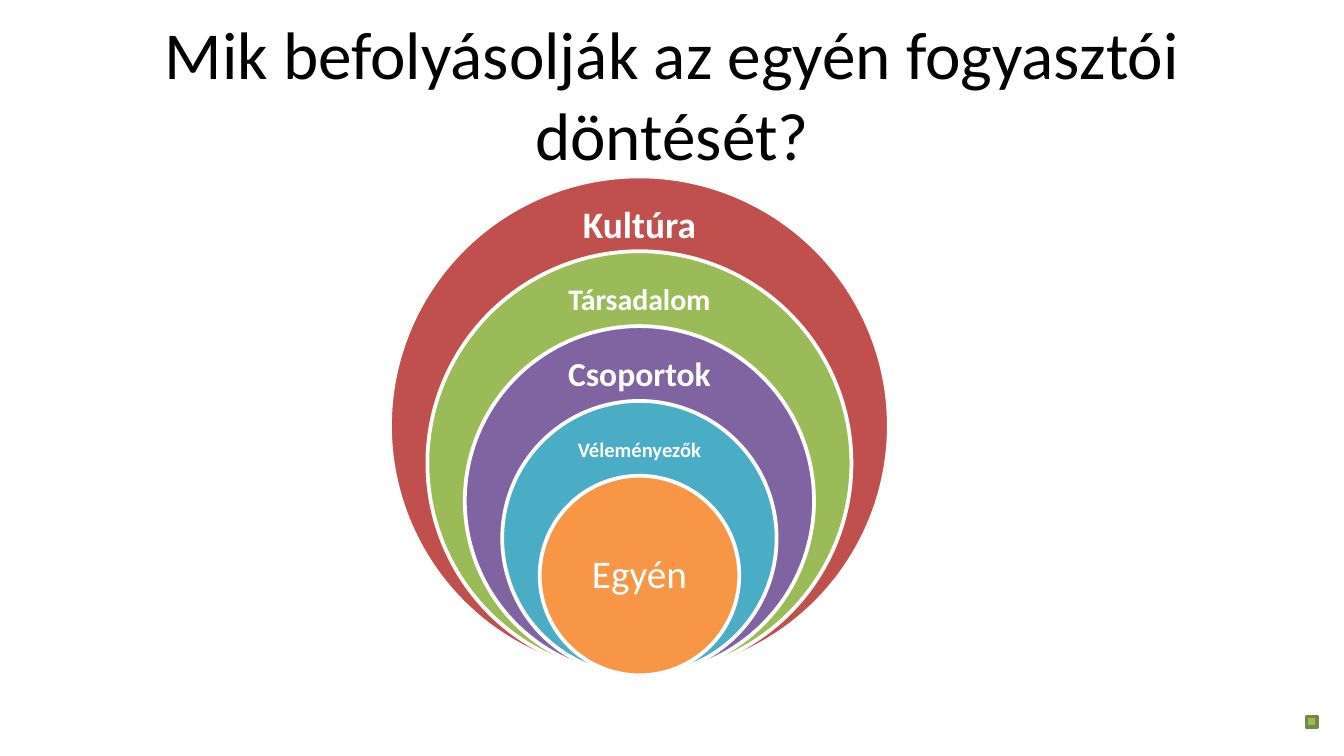
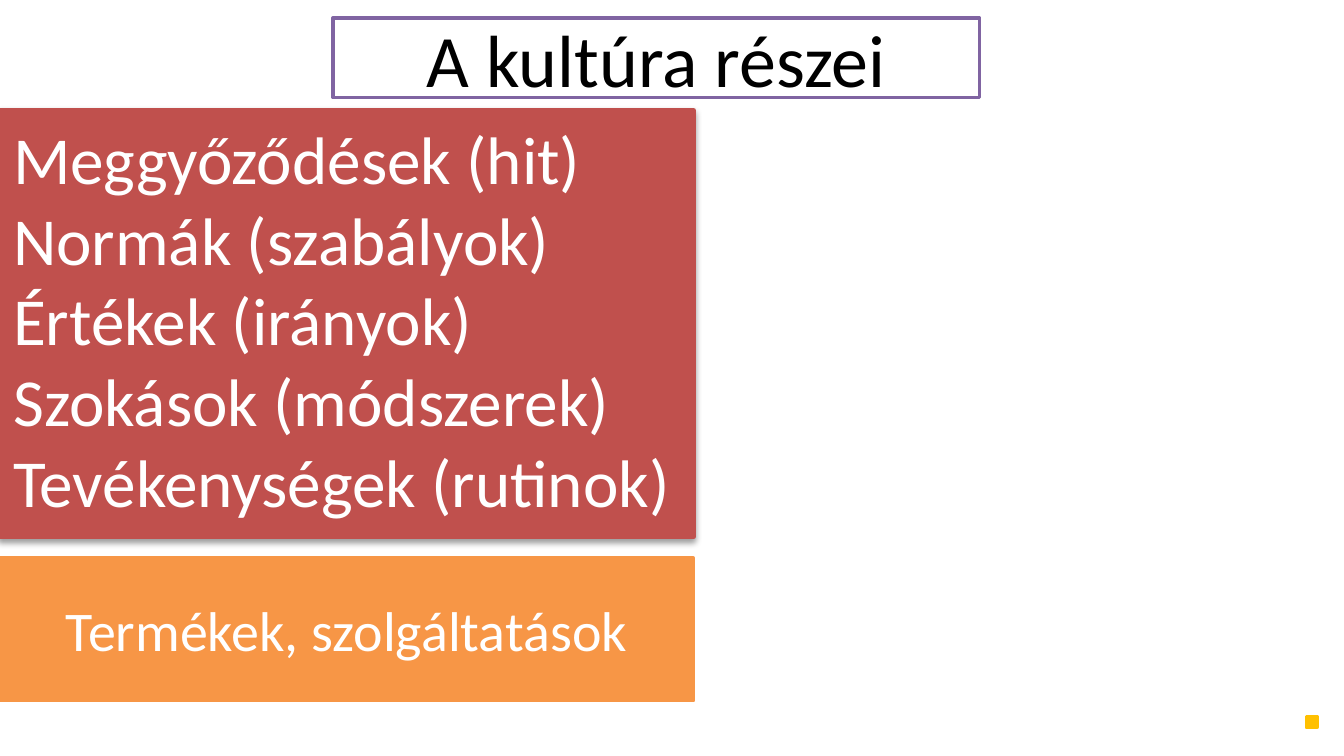
import pptx
import pptx.util
import pptx.dml.color
import pptx.enum.shapes
import pptx.enum.text
import pptx.oxml
import pptx.oxml.ns

COLS, ROWS = 100, 56.25
CELL = pptx.util.Inches(0.1)
FONT = "Calibri"
WHITE, BLACK = "FFFFFF", "000000"
RED, GREEN, PURPLE = "C0504D", "9BBB59", "8064A2"
TEAL, ORANGE, GOLD, OLIVE = "4BACC6", "F79646", "FFC000", "738A42"
RECT = pptx.enum.shapes.MSO_SHAPE.RECTANGLE
OVAL = pptx.enum.shapes.MSO_SHAPE.OVAL
LEFT = pptx.enum.text.PP_ALIGN.LEFT
CENTER = pptx.enum.text.PP_ALIGN.CENTER
TOP = pptx.enum.text.MSO_ANCHOR.TOP
MIDDLE = pptx.enum.text.MSO_ANCHOR.MIDDLE

RINGS = [
    ("Kultúra", RED, 20),
    ("Társadalom", GREEN, 16),
    ("Csoportok", PURPLE, 18),
    ("Véleményezők", TEAL, 11),
    ("Egyén", ORANGE, 21),
]
PARTS = [
    "Meggyőződések (hit)",
    "Normák (szabályok)",
    "Értékek (irányok)",
    "Szokások (módszerek)",
    "Tevékenységek (rutinok)",
]


def grid(*cells):
    return [round(cell * CELL) for cell in cells]


def color(code):
    return pptx.dml.color.RGBColor.from_string(code)


def paint(shape, fill, line, width=2):
    shape.fill.solid()
    shape.fill.fore_color.rgb = color(fill)
    shape.line.color.rgb = color(line)
    shape.line.width = pptx.util.Pt(width)


def write(shape, lines, size, code=WHITE, bold=False, align=CENTER, anchor=MIDDLE):
    frame = shape.text_frame
    frame.text = "\n".join(lines)
    frame.word_wrap = True
    frame.auto_size = pptx.enum.text.MSO_AUTO_SIZE.NONE
    frame.vertical_anchor = anchor
    for para in frame.paragraphs:
        para.alignment = align
        para.font.name = FONT
        para.font.size = pptx.util.Pt(size)
        para.font.bold = bold
        para.font.color.rgb = color(code)


def block(slide, kind, box, fill, line, width=2):
    shape = slide.shapes.add_shape(kind, *grid(*box))
    shape.shadow.inherit = False
    paint(shape, fill, line, width)
    return shape


def shade(shape):
    space = pptx.oxml.ns.nsdecls("a")
    effect = pptx.oxml.parse_xml(
        f'<a:outerShdw {space} blurRad="{pptx.util.Pt(3.1)}" '
        f'dist="{pptx.util.Pt(1.6)}" dir="5400000" rotWithShape="0">'
        f'<a:srgbClr val="{BLACK}"><a:alpha val="38000"/></a:srgbClr>'
        "</a:outerShdw>"
    )
    shape.element.spPr.find(pptx.oxml.ns.qn("a:effectLst")).append(effect)


def start(deck, title, box, size, fill, line):
    slide = deck.slides.add_slide(deck.slide_layouts[5])
    head = slide.shapes.title
    head.left, head.top, head.width, head.height = grid(*box)
    write(head, [title], size, BLACK)
    block(slide, RECT, (COLS - 2.8, ROWS - 2.93, 0.8, 0.8), fill, line)
    return slide, head


def label(slide, text, box, size, bold):
    shape = slide.shapes.add_textbox(*grid(*box))
    write(shape, [text], size, bold=bold)
    frame = shape.text_frame
    frame.margin_left = frame.margin_right = 0
    frame.margin_top = frame.margin_bottom = 0
    frame.paragraphs[0].line_spacing = 0.9


def onion(slide, box):
    left, top, size = box
    core = 0.4 * size
    step = (size - core) / (len(RINGS) - 1)
    wide, tall = 0.37 * size, 0.1 * size
    for i, (text, fill, points) in enumerate(RINGS):
        side = size - i * step
        y = top + i * step
        block(slide, OVAL, (left + i * step / 2, y, side, side), fill, WHITE)
        inner = i == len(RINGS) - 1
        mid = y + (side / 2 if inner else 0.1 * size)
        spot = (left + (size - wide) / 2, mid - tall / 2, wide, tall)
        label(slide, text, spot, points, not inner)


def stack(slide, box):
    left, top, wide, tall = box
    low, gap = 10.6, 1.6
    high = tall - low - gap
    traits = block(slide, RECT, (left, top, wide, high), RED, RED, 3)
    shade(traits)
    write(traits, PARTS, 36, align=LEFT, anchor=TOP)
    goods = block(slide, RECT, (left, top + high + gap, wide, low), ORANGE, ORANGE)
    write(goods, ["Termékek, szolgáltatások"], 30)


def main():
    deck = pptx.Presentation()
    deck.slide_width, deck.slide_height = grid(COLS, ROWS)

    title = "Mik befolyásolják az egyén fogyasztói döntését?"
    slide, head = start(deck, title, (5, 2.25, 90, 9.38), 36, GREEN, OLIVE)
    onion(slide, (29.02, 13.13, 37.12))

    title = "A kultúra részei"
    slide, head = start(deck, title, (24.78, 1.35, 48.1, 5.9), 39.6, GOLD, GOLD)
    paint(head, WHITE, PURPLE)
    stack(slide, (0, 8.24, 51.6, 43.9))

    deck.save("out.pptx")


if __name__ == "__main__":
    main()
